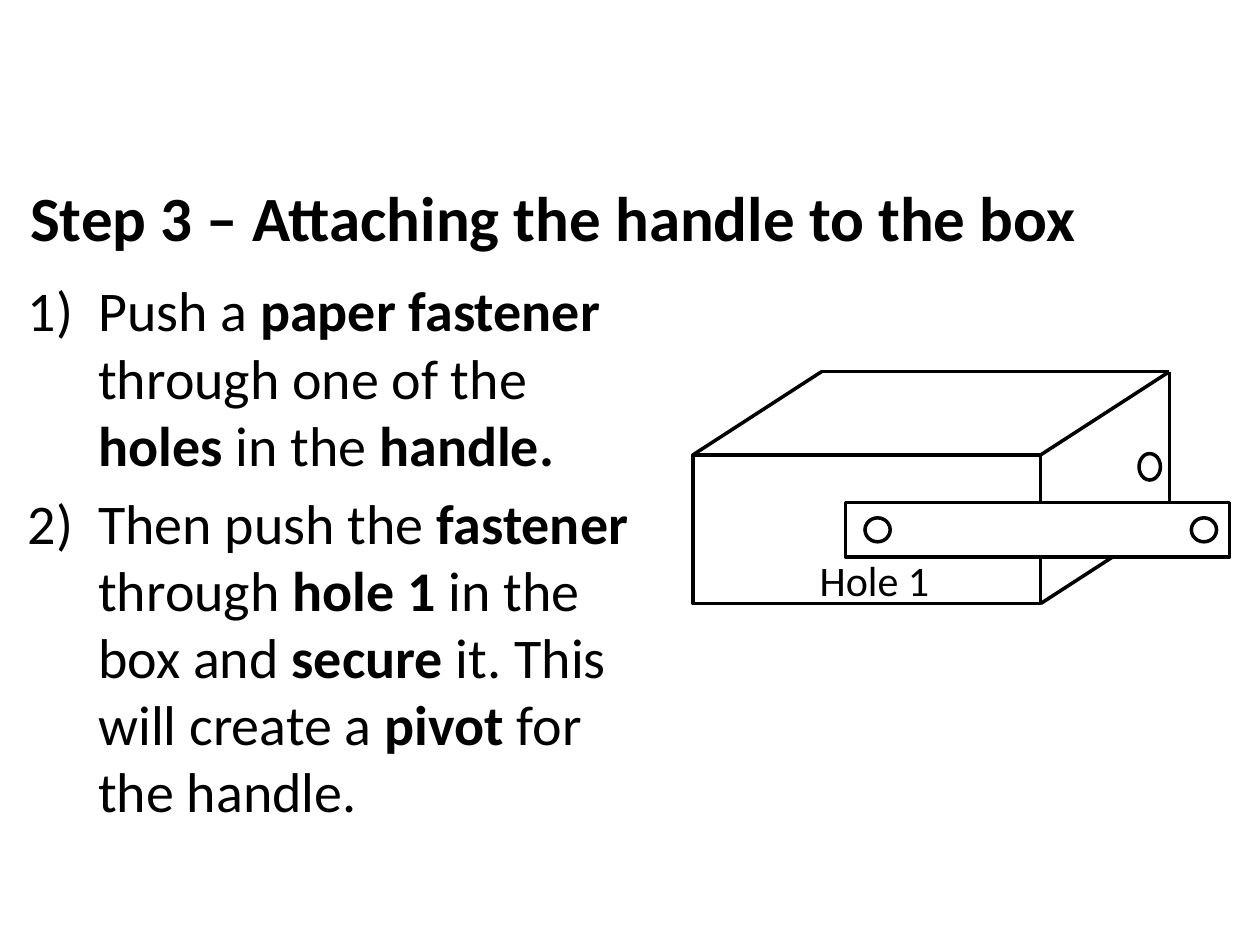
import pptx
import pptx.util
import pptx.dml.color
import pptx.enum.shapes
import pptx.enum.text
import pptx.oxml.ns
import lxml.etree

Inches = pptx.util.Inches
Pt = pptx.util.Pt
Kind = pptx.enum.shapes.MSO_SHAPE
Align = pptx.enum.text.PP_ALIGN
qn = pptx.oxml.ns.qn

BLACK = pptx.dml.color.RGBColor(0, 0, 0)
WHITE = pptx.dml.color.RGBColor(255, 255, 255)
BASE = {"name": "Calibri", "bold": False}
FRAME = {
    "word_wrap": True,
    "auto_size": pptx.enum.text.MSO_AUTO_SIZE.NONE,
    "vertical_anchor": pptx.enum.text.MSO_ANCHOR.TOP,
}
STEPS = [
    "Push a *paper fastener *through one of the *holes* in the *handle.*",
    "Then push the *fastener *through *hole 1 *in the box and *secure* it. "
    "This will create a *pivot* for the handle.",
]


def apply(item, form):
    for key, value in form.items():
        setattr(item, key, value)


def place(shape, box):
    sides = ("left", "top", "width", "height")
    apply(shape, dict(zip(sides, map(Inches, box))))
    apply(shape.text_frame, FRAME)


def write(para, text, size, align=Align.LEFT):
    apply(para, {"alignment": align, "space_before": Pt(0)})
    for index, part in enumerate(text.split("*")):
        if part:
            run = para.add_run()
            run.text = part
            apply(run.font, {**BASE, "size": Pt(size), "bold": index % 2 == 1})
            run.font.color.rgb = BLACK


def number(para):
    props = para._p.get_or_add_pPr()
    indent = Inches(0.56)
    props.set("marL", str(indent))
    props.set("indent", str(-indent))
    lxml.etree.SubElement(props, qn("a:buFont"), typeface="+mj-lt")
    lxml.etree.SubElement(props, qn("a:buAutoNum"), type="arabicParenR")


def title(shape, box):
    place(shape, box)
    write(shape.text_frame.paragraphs[0],
          "*Step 3 – Attaching the handle to the box*", 36)


def steps(shape, box):
    place(shape, box)
    frame = shape.text_frame
    for index, text in enumerate(STEPS):
        para = frame.add_paragraph() if index else frame.paragraphs[0]
        number(para)
        para.space_after = Pt(6)
        write(para, text, 32)


def ink(shape):
    shape.line.color.rgb = BLACK
    shape.line.width = Pt(2)


def solid(parent, kind, box):
    shape = parent.add_shape(kind, *map(Inches, box))
    shape.shadow.inherit = False
    shape.fill.solid()
    shape.fill.fore_color.rgb = WHITE
    ink(shape)
    return shape


def edge(parent, start, end):
    line = parent.add_connector(
        pptx.enum.shapes.MSO_CONNECTOR.STRAIGHT, *map(Inches, start + end))
    ink(line)
    lxml.etree.SubElement(line._element.spPr, qn("a:effectLst"))


def model(slide, box):
    left, top, width, height = box
    front, rise = 2.76, 0.66
    deep = 1.02
    right, back = left + front, left + front + deep
    lip, base = top + rise, top + height
    group = slide.shapes.add_group_shape().shapes
    solid(group, Kind.RECTANGLE, (left, lip, front, height - rise))
    edge(group, (left, lip), (left + deep, top))
    edge(group, (right, lip), (back, top))
    edge(group, (left + deep, top), (back, top))
    edge(group, (right, base), (back, base - rise))
    edge(group, (back, base - rise), (back, top))
    handle(group, (left + 1.21, top + 1.04, width - 1.21, 0.43))
    solid(slide.shapes, Kind.OVAL, (back - 0.24, top + 0.65, 0.17, 0.21))


def handle(group, box):
    left, top, width, height = box
    solid(group, Kind.RECTANGLE, box)
    wide, high = 0.19, 0.2
    for across in (width - 0.3, 0.16):
        hole = solid(group, Kind.OVAL,
                     (left + across, top + (height - high) / 2, wide, high))
        hole.rotation = 90


def label(slide, box):
    shape = slide.shapes.add_textbox(*map(Inches, box))
    place(shape, box)
    write(shape.text_frame.paragraphs[0], "Hole 1", 24, Align.CENTER)


def main():
    deck = pptx.Presentation()
    apply(deck, {"slide_width": Inches(10), "slide_height": Inches(7.5)})
    slide = deck.slides.add_slide(deck.slide_layouts[1])
    title(slide.shapes.title, (0.14, 1.37, 9.59, 0.71))
    steps(slide.placeholders[1], (0.12, 2.14, 5.04, 5.3))
    model(slide, (5.5, 2.95, 4.26, 1.84))
    label(slide, (6.23, 4.35, 1.42, 0.5))
    deck.save("out.pptx")


if __name__ == "__main__":
    main()
